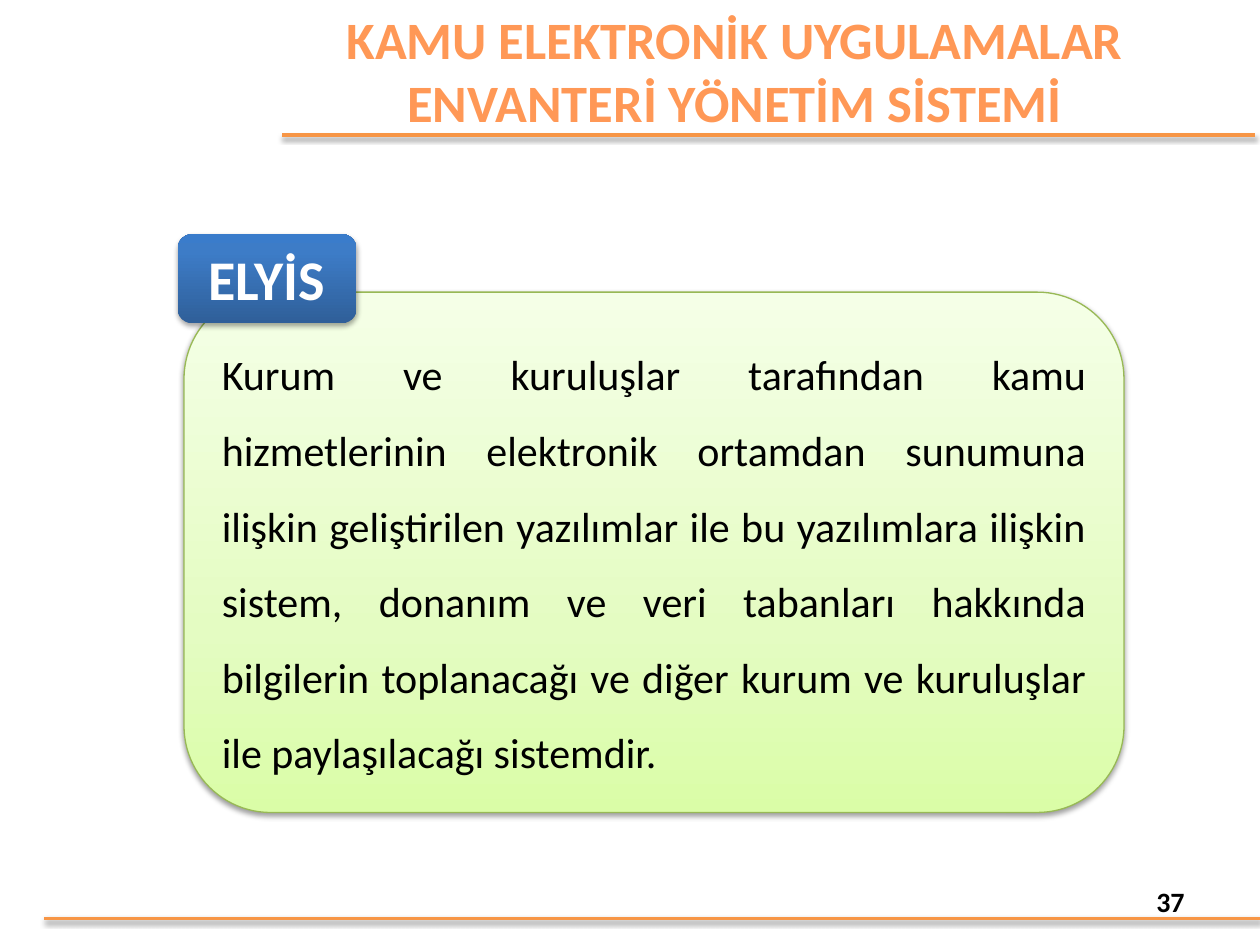
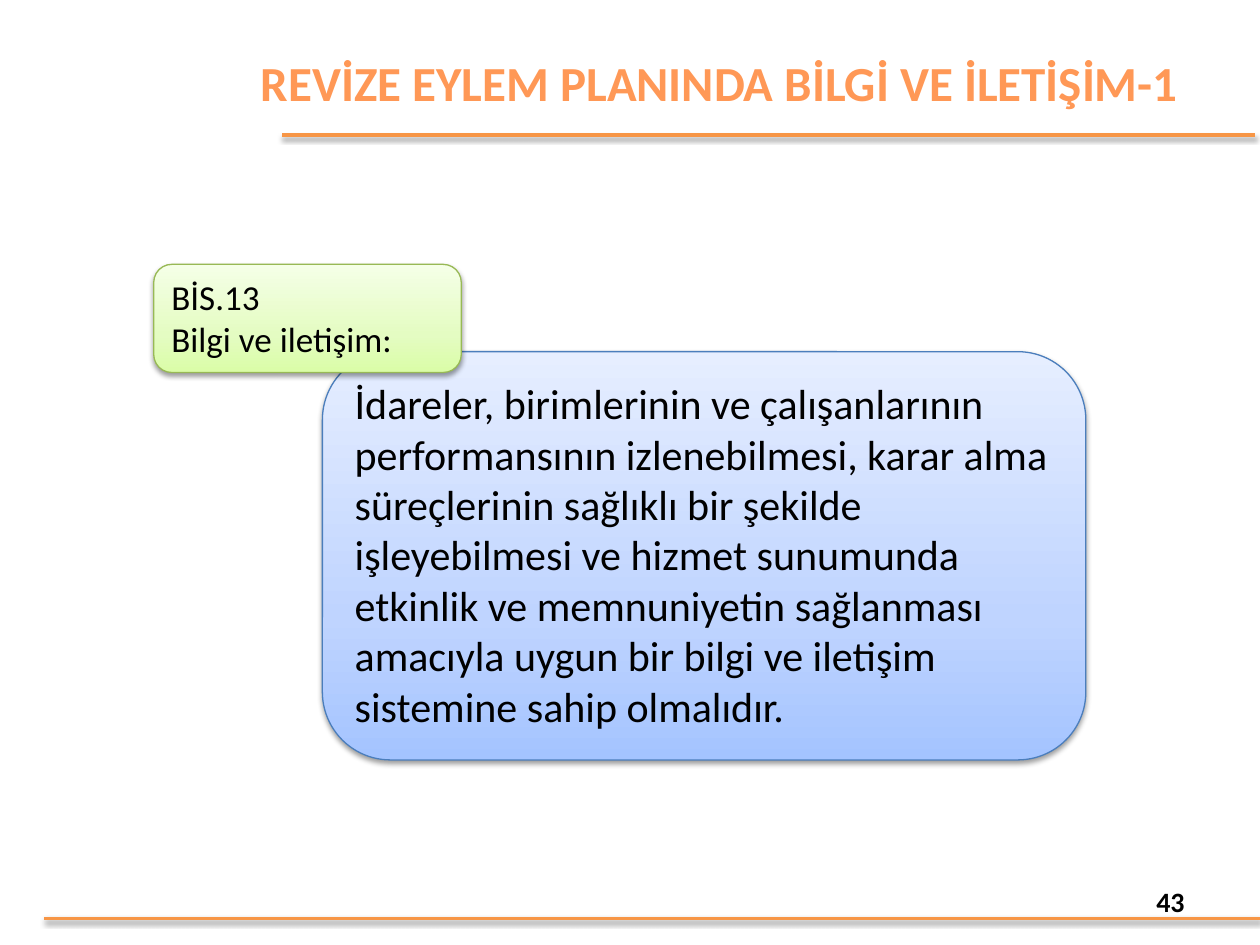
from dataclasses import dataclass

from lxml import etree
from pptx import Presentation
from pptx import util as u
from pptx.dml.color import RGBColor
from pptx.enum import shapes, text
from pptx.oxml import ns


@dataclass(frozen=True)
class Theme:
    font: str = "Calibri"
    rule: str = "F79646"
    title: str = "FF9856"
    ink: str = "000000"
    white: str = "FFFFFF"
    # Fill stops run from the bottom edge up, as (percent, colour)
    green: tuple = ((0, "DAFDA7"), (35, "E4FCC2"), (100, "F5FFE7"))
    green_line: str = "98B955"
    pale_blue: tuple = ((0, "A4C4FF"), (35, "BFD4FF"), (100, "E6EEFF"))
    pale_blue_line: str = "4B7EBC"
    deep_blue: tuple = ((0, "2F5F99"), (80, "3D7CC7"), (100, "3A7CCB"))
    body_size: int = 24
    label_size: int = 20
    badge_size: int = 32
    number_size: int = 16


theme = Theme()
LEFT, CENTER = text.PP_ALIGN.LEFT, text.PP_ALIGN.CENTER
RIGHT, JUSTIFY = text.PP_ALIGN.RIGHT, text.PP_ALIGN.JUSTIFY


def write(frame, content, size, color, bold=False, align=LEFT, spacing=None):
    frame.word_wrap = True
    frame.text = content
    for paragraph in frame.paragraphs:
        paragraph.alignment = align
        paragraph.line_spacing = spacing
        paragraph.font.name = theme.font
        paragraph.font.size = u.Pt(size)
        paragraph.font.bold = bold
        paragraph.font.color.rgb = RGBColor.from_string(color)


def add_soft_shadow(shape, alpha=38, distance=1.6):
    properties = shape.element.spPr
    effects = etree.SubElement(properties, ns.qn("a:effectLst"))
    shadow = etree.SubElement(effects, ns.qn("a:outerShdw"), blurRad=str(u.Pt(3.1)),
                              dist=str(u.Pt(distance)), dir="5400000", rotWithShape="0")
    color = etree.SubElement(shadow, ns.qn("a:srgbClr"), val=theme.ink)
    etree.SubElement(color, ns.qn("a:alpha"), val=str(alpha * 1000))


# Content: boxes are (left, top, width, height) in centimetres
slides = [
    dict(
        number="37",
        title="KAMU ELEKTRONİK UYGULAMALAR ENVANTERİ YÖNETİM SİSTEMİ",
        title_box=(5.11, -0.08, 19.41, 3), title_size=30,
        cards=[
            dict(box=(3.71, 5.89, 18.95, 10.49), fill=theme.green, line=theme.green_line,
                 style=dict(size=theme.body_size, color=theme.ink, align=JUSTIFY, spacing=1.5),
                 words="Kurum ve kuruluşlar tarafından kamu hizmetlerinin elektronik ortamdan "
                       "sunumuna ilişkin geliştirilen yazılımlar ile bu yazılımlara ilişkin "
                       "sistem, donanım ve veri tabanları hakkında bilgilerin toplanacağı ve "
                       "diğer kurum ve kuruluşlar ile paylaşılacağı sistemdir."),
            dict(box=(3.58, 4.72, 3.61, 1.8), fill=theme.deep_blue, line=None,
                 style=dict(size=theme.badge_size, color=theme.white, bold=True, align=CENTER),
                 shadow=dict(alpha=35, distance=1.8), words="ELYİS"),
        ],
    ),
    dict(
        number="43",
        title="REVİZE EYLEM PLANINDA BİLGİ VE İLETİŞİM-1",
        title_box=(4.9, 0.97, 19.2, 1.35), title_size=28,
        cards=[
            dict(box=(6.5, 7.09, 15.39, 8.23), fill=theme.pale_blue, line=theme.pale_blue_line,
                 style=dict(size=theme.body_size, color=theme.ink),
                 words="İdareler, birimlerinin ve çalışanlarının performansının izlenebilmesi, "
                       "karar alma süreçlerinin sağlıklı bir şekilde işleyebilmesi ve hizmet "
                       "sunumunda etkinlik ve memnuniyetin sağlanması amacıyla uygun bir bilgi "
                       "ve iletişim sistemine sahip olmalıdır."),
            dict(box=(3.1, 5.33, 6.2, 2.18), fill=theme.green, line=theme.green_line,
                 style=dict(size=theme.label_size, color=theme.ink),
                 words="BİS.13\nBilgi ve iletişim:"),
        ],
    ),
]

presentation = Presentation()
presentation.slide_width, presentation.slide_height = u.Cm(25.4), u.Cm(19.05)
layout = presentation.slide_layouts.get_by_name("Title Only")

for content in slides:
    slide = presentation.slides.add_slide(layout)

    # Title
    title = slide.shapes.title
    title.left, title.top, title.width, title.height = map(u.Cm, content["title_box"])
    write(title.text_frame, content["title"], content["title_size"], theme.title,
          bold=True, align=CENTER)
    title.text_frame.auto_size = text.MSO_AUTO_SIZE.NONE
    title.text_frame.vertical_anchor = text.MSO_ANCHOR.MIDDLE

    # Slide number
    number = slide.shapes.add_textbox(u.Cm(18.21), u.Cm(17.65), u.Cm(5.92), u.Cm(1.02))
    write(number.text_frame, content["number"], theme.number_size, theme.ink,
          bold=True, align=RIGHT)
    number.text_frame.vertical_anchor = text.MSO_ANCHOR.MIDDLE

    # Panel with its overlapping label
    for card in content["cards"]:
        shape = slide.shapes.add_shape(shapes.MSO_SHAPE.ROUNDED_RECTANGLE,
                                       *map(u.Cm, card["box"]))
        shape.fill.gradient()
        shape.fill.gradient_angle = 90
        stops = shape.element.spPr.find(".//" + ns.qn("a:gsLst"))
        stops.clear()
        for percent, color in card["fill"]:
            stop = etree.SubElement(stops, ns.qn("a:gs"), pos=str(percent * 1000))
            etree.SubElement(stop, ns.qn("a:srgbClr"), val=color)
        if card["line"]:
            shape.line.color.rgb = RGBColor.from_string(card["line"])
            shape.line.width = u.Pt(0.75)
        else:
            shape.line.fill.background()
        add_soft_shadow(shape, **card.get("shadow", {}))
        write(shape.text_frame, card["words"], **card["style"])
        shape.text_frame.auto_size = text.MSO_AUTO_SIZE.SHAPE_TO_FIT_TEXT
        shape.text_frame.vertical_anchor = text.MSO_ANCHOR.TOP

# Shared rules: drawn once, then moved to the layout
for left, right, y in ((0.89, 25.4, 18.52), (5.69, 25.3, 2.72)):
    rule = slide.shapes.add_connector(shapes.MSO_CONNECTOR.STRAIGHT,
                                      u.Cm(left), u.Cm(y), u.Cm(right), u.Cm(y))
    rule.line.color.rgb = RGBColor.from_string(theme.rule)
    rule.line.width = u.Pt(2)
    add_soft_shadow(rule)
    layout.shapes.element.append(rule.element)

presentation.save("out.pptx")
